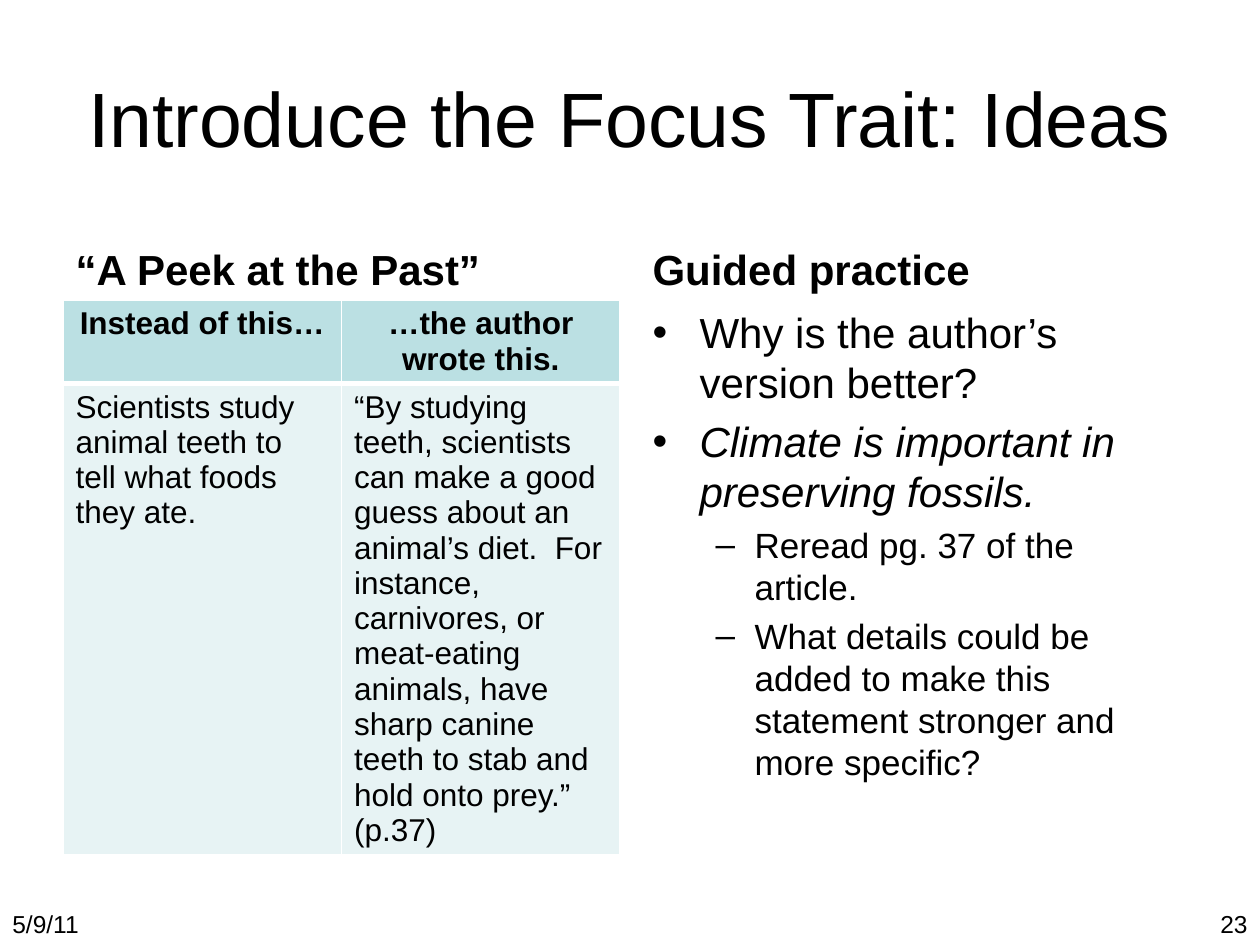
from lxml import etree
from pptx import Presentation
from pptx.dml.color import RGBColor
from pptx.enum.text import MSO_ANCHOR, MSO_AUTO_SIZE, PP_ALIGN
from pptx.oxml.ns import qn
from pptx.util import Pt

LEFT, CENTER, RIGHT = PP_ALIGN.LEFT, PP_ALIGN.CENTER, PP_ALIGN.RIGHT
TOP, MIDDLE, BOTTOM = MSO_ANCHOR.TOP, MSO_ANCHOR.MIDDLE, MSO_ANCHOR.BOTTOM
NO_AUTOFIT = MSO_AUTO_SIZE.NONE
EMU_PER_PX = 914400 // 126
FONT, BLACK, WHITE = "Arial", "000000", "FFFFFF"
COMPARISON_LAYOUT, TABLE_PLACEHOLDER = 4, 2

MARGIN, COLUMN_WIDTH, COLUMN_GAP = 63, 557, 20
RIGHT_COLUMN = MARGIN + COLUMN_WIDTH + COLUMN_GAP
HEADING_TOP, HEADING_HEIGHT = 212, 88
CONTENT_TOP = HEADING_TOP + HEADING_HEIGHT
ROW_HEIGHT = 52
FOOTER_TOP, FOOTER_HEIGHT = 903, 42

TITLE = "Introduce the Focus Trait: Ideas"
HEADINGS = [
    (1, MARGIN, "“A Peek at the Past”"),
    (3, RIGHT_COLUMN, "Guided practice"),
]
TABLE_ROWS = [
    ("Instead of this…", "…the author wrote this."),
    (
        "Scientists study animal teeth to tell what foods they ate.",
        "“By studying teeth, scientists can make a good guess about an animal’s diet.  "
        "For instance, carnivores, or meat-eating animals, have sharp canine teeth to "
        "stab and hold onto prey.” (p.37)",
    ),
]
ROW_STYLES = [("BBE0E3", True, CENTER, 3), ("E7F3F4", False, LEFT, 1)]
PRACTICE = [
    (0, False, "Why is the author’s version better?"),
    (0, True, "Climate is important in preserving fossils."),
    (1, False, "Reread pg. 37 of the article."),
    (1, False, "What details could be added to make this statement stronger and more specific?"),
]
LEVELS = [("•", 47, 47, 24), ("–", 102, 39, 20)]
FOOTERS = [(0, 199, LEFT, "5/9/11"), (1092, 168, RIGHT, "23")]


def px(length):
    return length * EMU_PER_PX


def color(value):
    return RGBColor.from_string(value)


def place(shape, left, top, width, height):
    shape.left, shape.top = px(left), px(top)
    shape.width, shape.height = px(width), px(height)


def set_frame(shape, anchor):
    frame = shape.text_frame
    frame.word_wrap = True
    frame.auto_size = NO_AUTOFIT
    frame.vertical_anchor = anchor
    return frame


def write(paragraph, text, size, align=LEFT, bold=False, italic=False, space_before=0):
    paragraph.alignment = align
    paragraph.space_before = Pt(space_before)
    run = paragraph.add_run()
    run.text = text
    run.font.name = FONT
    run.font.size = Pt(size)
    run.font.bold, run.font.italic = bold, italic
    run.font.color.rgb = color(BLACK)


def set_bullet(paragraph, character, indent, hanging):
    properties = paragraph._p.get_or_add_pPr()
    properties.set("marL", str(px(indent)))
    properties.set("indent", str(-px(hanging)))
    etree.SubElement(properties, qn("a:buFont"), typeface=FONT)
    etree.SubElement(properties, qn("a:buChar"), char=character)


def set_borders(cell, widths):
    properties = cell._tc.get_or_add_tcPr()
    for side, width in widths.items():
        line = etree.SubElement(properties, qn(f"a:ln{side}"), w=str(Pt(width)))
        fill = etree.SubElement(line, qn("a:solidFill"))
        etree.SubElement(fill, qn("a:srgbClr"), val=WHITE)


def add_headings(slide):
    for index, left, text in HEADINGS:
        heading = slide.placeholders[index]
        place(heading, left, HEADING_TOP, COLUMN_WIDTH, HEADING_HEIGHT)
        write(set_frame(heading, BOTTOM).paragraphs[0], text, 24, bold=True)


def add_comparison_table(slide):
    row_count, column_count = len(TABLE_ROWS), len(TABLE_ROWS[0])
    table = slide.shapes.add_table(
        row_count, column_count, px(MARGIN), px(CONTENT_TOP),
        px(COLUMN_WIDTH), px(ROW_HEIGHT * row_count),
    ).table
    top_width = 1
    for row, (texts, style) in enumerate(zip(TABLE_ROWS, ROW_STYLES)):
        fill, bold, align, bottom_width = style
        for column, text in enumerate(texts):
            cell = table.cell(row, column)
            set_borders(cell, {"L": 1, "R": 1, "T": top_width, "B": bottom_width})
            cell.fill.solid()
            cell.fill.fore_color.rgb = color(fill)
            write(cell.text_frame.paragraphs[0], text, 18, align, bold)
        top_width = bottom_width


def add_practice_list(slide):
    body = slide.placeholders[4]
    place(body, RIGHT_COLUMN, CONTENT_TOP, COLUMN_WIDTH, 544)
    frame = set_frame(body, TOP)
    for number, (level, italic, text) in enumerate(PRACTICE):
        paragraph = frame.add_paragraph() if number else frame.paragraphs[0]
        character, indent, hanging, size = LEVELS[level]
        paragraph.level = level
        set_bullet(paragraph, character, indent, hanging)
        space_before = size * 0.2 if number else 0
        write(paragraph, text, size, italic=italic, space_before=space_before)


def add_footers(slide):
    for left, width, align, text in FOOTERS:
        box = slide.shapes.add_textbox(
            px(left), px(FOOTER_TOP), px(width), px(FOOTER_HEIGHT)
        )
        write(set_frame(box, TOP).paragraphs[0], text, 14, align)


def main():
    """Build the focus trait comparison slide."""
    presentation = Presentation()
    presentation.slide_width, presentation.slide_height = px(1260), px(945)
    layout = presentation.slide_layouts[COMPARISON_LAYOUT]
    slide = presentation.slides.add_slide(layout)
    title = slide.shapes.title
    place(title, MARGIN, 38, 1134, 157)
    write(set_frame(title, MIDDLE).paragraphs[0], TITLE, 44, CENTER)
    add_headings(slide)
    unused = slide.placeholders[TABLE_PLACEHOLDER].element
    unused.getparent().remove(unused)
    add_comparison_table(slide)
    add_practice_list(slide)
    add_footers(slide)
    presentation.save("out.pptx")


if __name__ == "__main__":
    main()
